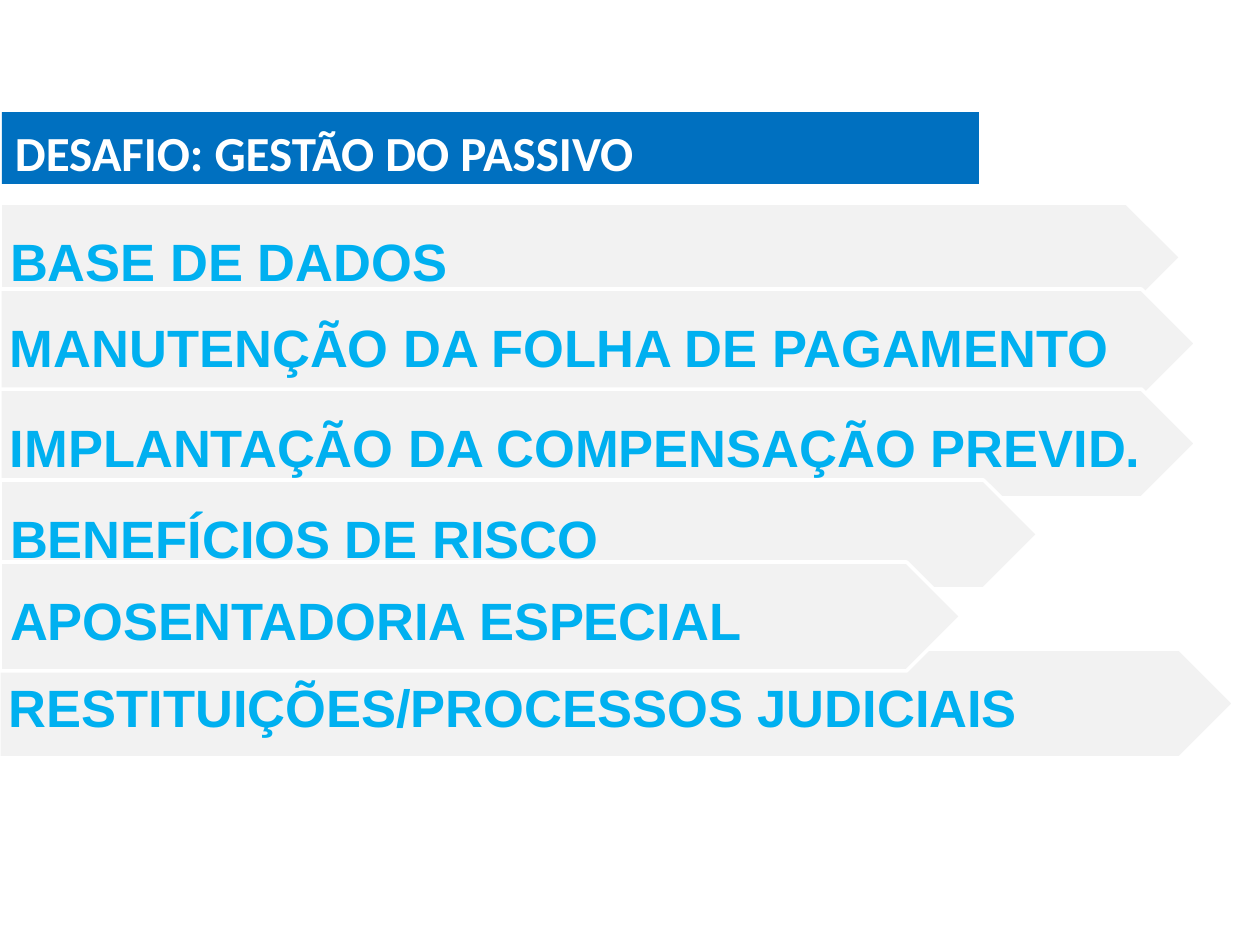
from pptx import Presentation
from pptx.dml.color import RGBColor
from pptx.enum.shapes import MSO_SHAPE
from pptx.enum.text import MSO_ANCHOR, PP_ALIGN
from pptx.util import Pt

EMU_PER_PX = 914400 / 126
WHITE = RGBColor(0xFF, 0xFF, 0xFF)
GREY = RGBColor(0xF2, 0xF2, 0xF2)
BLUE = RGBColor(0x00, 0x70, 0xC0)
SKY = RGBColor(0x00, 0xB0, 0xF0)
ARROW_HEIGHT = 109


def px(length):
    return round(length * EMU_PER_PX)


def add_banner(preset, box, fill, text, font_name, size, color, insets):
    """Add a filled shape with one bold, left-aligned line of text."""
    banner = slide.shapes.add_shape(preset, *map(px, box))
    banner.shadow.inherit = False
    banner.fill.solid()
    banner.fill.fore_color.rgb = fill
    frame = banner.text_frame
    frame.word_wrap = True
    frame.vertical_anchor = MSO_ANCHOR.MIDDLE
    frame.margin_left, frame.margin_top, frame.margin_right, frame.margin_bottom = map(px, insets)
    line = frame.paragraphs[0]
    line.text = text
    line.alignment = PP_ALIGN.LEFT
    line.font.name = font_name
    line.font.size = Pt(size)
    line.font.bold = True
    line.font.color.rgb = color
    return banner


prs = Presentation()
prs.slide_width, prs.slide_height = px(1260), px(945)
slide = prs.slides.add_slide(prs.slide_layouts[6])

title = add_banner(MSO_SHAPE.RECTANGLE, (2, 112, 977, 72), BLUE,
                   "DESAFIO: GESTÃO DO PASSIVO", "Calibri", 28, WHITE, (13, 10, 13, 2))
title.line.fill.background()

# Back to front: the last arrow overlaps the one below it
challenges = [
    ("BASE DE DADOS", 0, 203, 1181),
    ("MANUTENÇÃO DA FOLHA DE PAGAMENTO", 0, 289, 1196),
    ("IMPLANTAÇÃO DA COMPENSAÇÃO PREVID.", 0, 389, 1196),
    ("BENEFÍCIOS DE RISCO", 0, 480, 1038),
    ("RESTITUIÇÕES/PROCESSOS JUDICIAIS", -1, 649, 1235),
    ("APOSENTADORIA ESPECIAL", 0, 562, 961),
]
for challenge, left, top, width in challenges:
    arrow = add_banner(MSO_SHAPE.PENTAGON, (left, top, width, ARROW_HEIGHT), GREY,
                       challenge, "Arial", 30, SKY, (10, 12, 5, 6))
    arrow.line.color.rgb = WHITE
    arrow.line.width = Pt(2)

prs.save("out.pptx")
